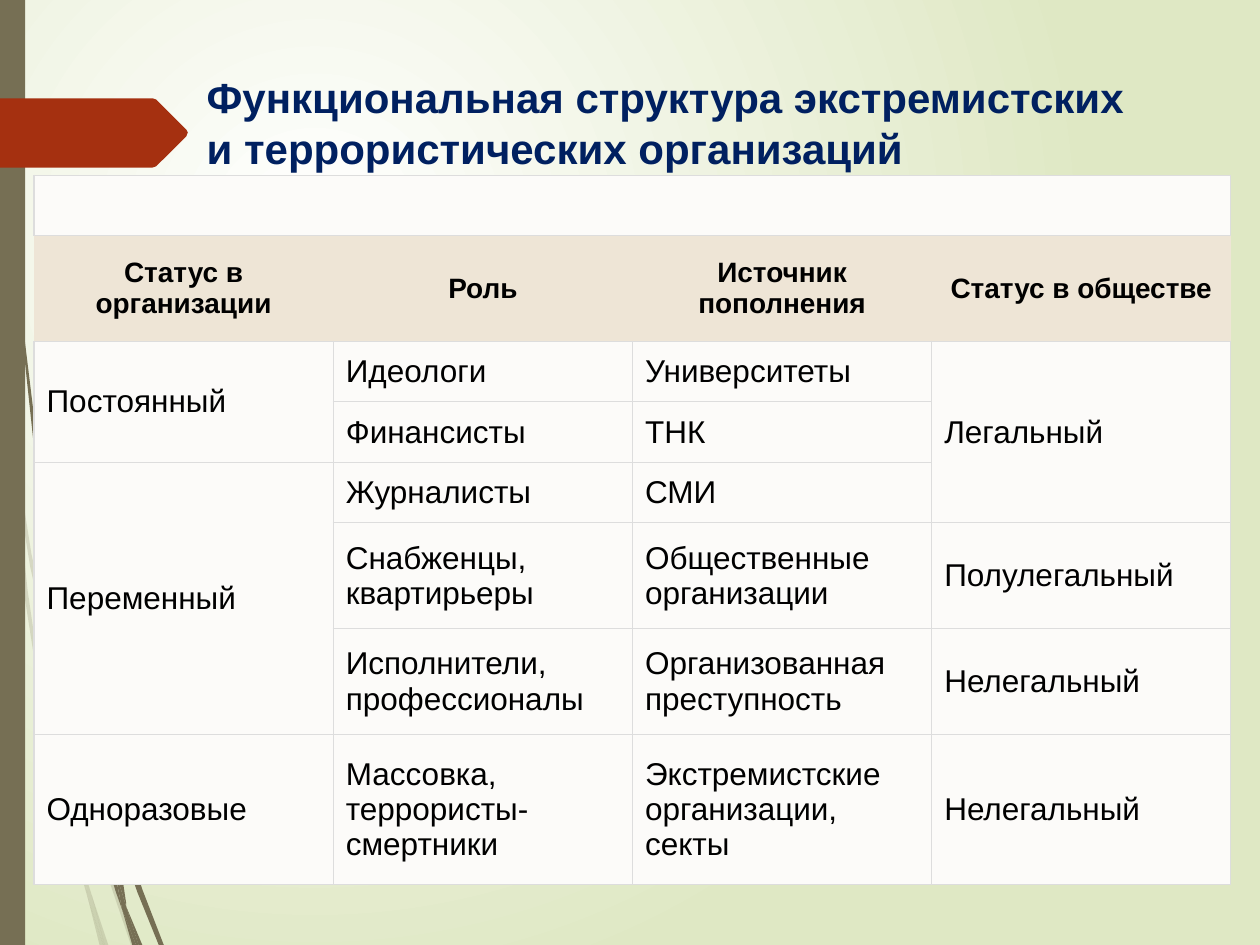
from lxml import etree
from pptx import Presentation
from pptx.dml.color import RGBColor
from pptx.enum import shapes, text
from pptx.oxml import ns
from pptx.util import Inches, Pt

OLIVE, RUST, NAVY, GRID = "766F54", "A53010", "002060", "DDDDDD"


def color(hex_value):
    return RGBColor.from_string(hex_value)


def write(frame, content, size=18, ink="000000", bold=False, align=text.PP_ALIGN.LEFT):
    frame.word_wrap = True
    frame.vertical_anchor = text.MSO_ANCHOR.MIDDLE
    frame.text = content
    paragraph = frame.paragraphs[0]
    paragraph.alignment = align
    for run in paragraph.runs:
        run.font.name, run.font.size, run.font.bold = "Arial", Pt(size), bold
        run.font.color.rgb = color(ink)


prs = Presentation()
prs.slide_width, prs.slide_height = Inches(10), Inches(7.5)
slide = prs.slides.add_slide(prs.slide_layouts[5])

# Background: light glow in the upper left
backdrop = slide.background.fill
backdrop.gradient()
for stop, tint in zip(backdrop.gradient_stops, ("FFFFFF", "DFE8C4")):
    stop.color.rgb = color(tint)
for stop, position in zip(backdrop.gradient_stops, (0, 1)):
    stop.position = position
gradient = slide._element.xpath("./p:cSld/p:bg//a:gradFill")[0]
for linear in gradient.findall(ns.qn("a:lin")):
    gradient.remove(linear)
glow = etree.SubElement(gradient, ns.qn("a:path"), path="circle")
etree.SubElement(glow, ns.qn("a:fillToRect"), l="50000", t="50000", r="100000", b="100000")

# Grass blades and the title arrow: fill, opacity in percent, outline points
outlines = [
    (OLIVE, 20, [(0.4, 5.22), (0.59, 5.99), (0.59, 5.86), (0.43, 5.2), (0.25, 4.4),
                 (0.1, 3.45), (0.12, 3.76), (0.24, 4.5)]),
    (OLIVE, 20, [(0.64, 6.07), (0.61, 5.96), (0.61, 6.1), (0.85, 6.94), (1.04, 7.5),
                 (1.08, 7.5), (0.88, 6.92)]),
    (OLIVE, 20, [(0.83, 7.5), (0.86, 7.5), (0.73, 7.11)]),
    (OLIVE, 20, [(0.64, 6.83), (0.48, 6.19), (0.33, 5.45), (0.22, 4.69), (0.12, 3.76),
                 (0.08, 3.5), (0.19, 4.7), (0.31, 5.47), (0.45, 6.21), (0.64, 6.93),
                 (0.7, 7.14), (0.69, 7.07)]),
    (OLIVE, 20, [(0.7, 7.14), (0.79, 7.5), (0.82, 7.5)]),
    (OLIVE, 20, [(0.67, 6.92), (0.65, 6.83), (0.69, 7.07), (0.7, 7.14), (0.82, 7.5),
                 (0.83, 7.5), (0.73, 7.11)]),
    (OLIVE, 100, [(0.05, 1.1), (0.14, 2.33), (0.27, 3.55), (0.46, 4.77), (0.47, 4.81),
                  (0.45, 4.53), (0.3, 3.55), (0.15, 2.32), (0.06, 1.09), (0.04, 0.48),
                  (0.03, 0), (0.02, 0), (0.03, 0.48)]),
    (OLIVE, 100, [(0.94, 6.49), (0.91, 6.41), (0.91, 6.56), (1.09, 7.08), (1.26, 7.5),
                  (1.3, 7.5), (1.13, 7.06)]),
    (OLIVE, 100, [(0.91, 6.91), (0.81, 6.57), (0.6, 5.56), (0.53, 5.05), (0.47, 4.77),
                  (0.56, 5.57), (0.77, 6.59), (0.92, 7.08), (0.97, 7.22), (0.96, 7.17)]),
    (OLIVE, 100, [(1.1, 7.5), (1.13, 7.5), (1, 7.19)]),
    (OLIVE, 100, [(0.97, 7.22), (1.05, 7.5), (1.08, 7.5)]),
    (OLIVE, 100, [(0.88, 6.45), (0.91, 6.91), (0.96, 7.06), (1, 7.19), (1, 7.16),
                  (0.91, 6.56), (0.9, 6.51)]),
    (OLIVE, 100, [(0.96, 7.06), (0.91, 6.91), (0.96, 7.17), (0.97, 7.22), (1.08, 7.5),
                  (1.1, 7.5), (1, 7.19)]),
    (OLIVE, 100, [(0, 0), (0.2, 0), (0.2, 7.5), (0, 7.5)]),
    (RUST, 100, [(0, 0.78), (1.21, 0.78), (1.24, 0.79), (1.48, 1.03), (1.49, 1.05),
                 (1.48, 1.08), (1.24, 1.32), (1.21, 1.33), (0, 1.33)]),
]
for fill, opacity, points in outlines:
    if fill == OLIVE and len(points) == 4:  # the side bar is a plain rectangle
        part = slide.shapes.add_shape(shapes.MSO_SHAPE.RECTANGLE, 0, 0, Inches(0.2), Inches(7.5))
    else:
        (x, y), *rest = [(Inches(px), Inches(py)) for px, py in points]
        builder = slide.shapes.build_freeform(x, y)
        builder.add_line_segments(rest, close=True)
        part = builder.convert_to_shape()
    part.shadow.inherit = False
    part.line.fill.background()
    part.fill.solid()
    part.fill.fore_color.rgb = color(fill)
    if opacity < 100:
        tone = part._element.spPr.find(ns.qn("a:solidFill"))[0]
        etree.SubElement(tone, ns.qn("a:alpha"), val=str(opacity * 1000))

# Table: None continues a merged cell
rows = [
    ["", None, None, None],
    ["Статус в организации", "Роль", "Источник пополнения", "Статус в обществе"],
    ["Постоянный", "Идеологи", "Университеты", "Легальный"],
    [None, "Финансисты", "ТНК", None],
    ["Переменный", "Журналисты", "СМИ", None],
    [None, "Снабженцы, квартирьеры", "Общественные организации", "Полулегальный"],
    [None, "Исполнители, профессионалы", "Организованная преступность", "Нелегальный"],
    ["Одноразовые", "Массовка, террористы-смертники", "Экстремистские организации, секты",
     "Нелегальный"],
]
heights = [0.48, 0.84, 0.48, 0.48, 0.48, 0.84, 0.84, 1.19]
structure = slide.shapes.add_table(len(rows), 4, Inches(0.27), Inches(1.39),
                                   Inches(9.5), Inches(sum(heights))).table
structure.first_row = structure.horz_banding = False
for column in structure.columns:
    column.width = Inches(9.5 / 4)
for r, (row, height) in enumerate(zip(rows, heights)):
    structure.rows[r].height = Inches(height)
    header = r == 1
    for c, content in enumerate(row):
        cell = structure.cell(r, c)
        borders = cell._tc.get_or_add_tcPr()
        for side in ("lnL", "lnR", "lnT", "lnB"):
            border = etree.SubElement(borders, ns.qn("a:" + side), w=str(Pt(0.75)))
            if header and side in ("lnL", "lnR"):
                etree.SubElement(border, ns.qn("a:noFill"))
            else:
                solid = etree.SubElement(border, ns.qn("a:solidFill"))
                etree.SubElement(solid, ns.qn("a:srgbClr"), val=GRID)
        cell.fill.solid()
        cell.fill.fore_color.rgb = color("EEE5D6" if header else "FCFBF9")
        cell.vertical_anchor = text.MSO_ANCHOR.MIDDLE
        if content:
            write(cell.text_frame, content, size=16 if header else 18, bold=header,
                  align=text.PP_ALIGN.CENTER if header else text.PP_ALIGN.LEFT)
for top, left, bottom, right in [(0, 0, 0, 3), (2, 0, 3, 0), (4, 0, 6, 0), (2, 3, 4, 3)]:
    structure.cell(top, left).merge(structure.cell(bottom, right))

# Title, in front of the table
title = slide.shapes.title
title.left, title.top, title.width, title.height = map(Inches, (1.54, 0.5, 7.64, 0.94))
write(title.text_frame, "Функциональная структура экстремистских\vи террористических организаций",
      size=24, ink=NAVY, bold=True)
slide.shapes._spTree.append(title._element)

prs.save("out.pptx")
